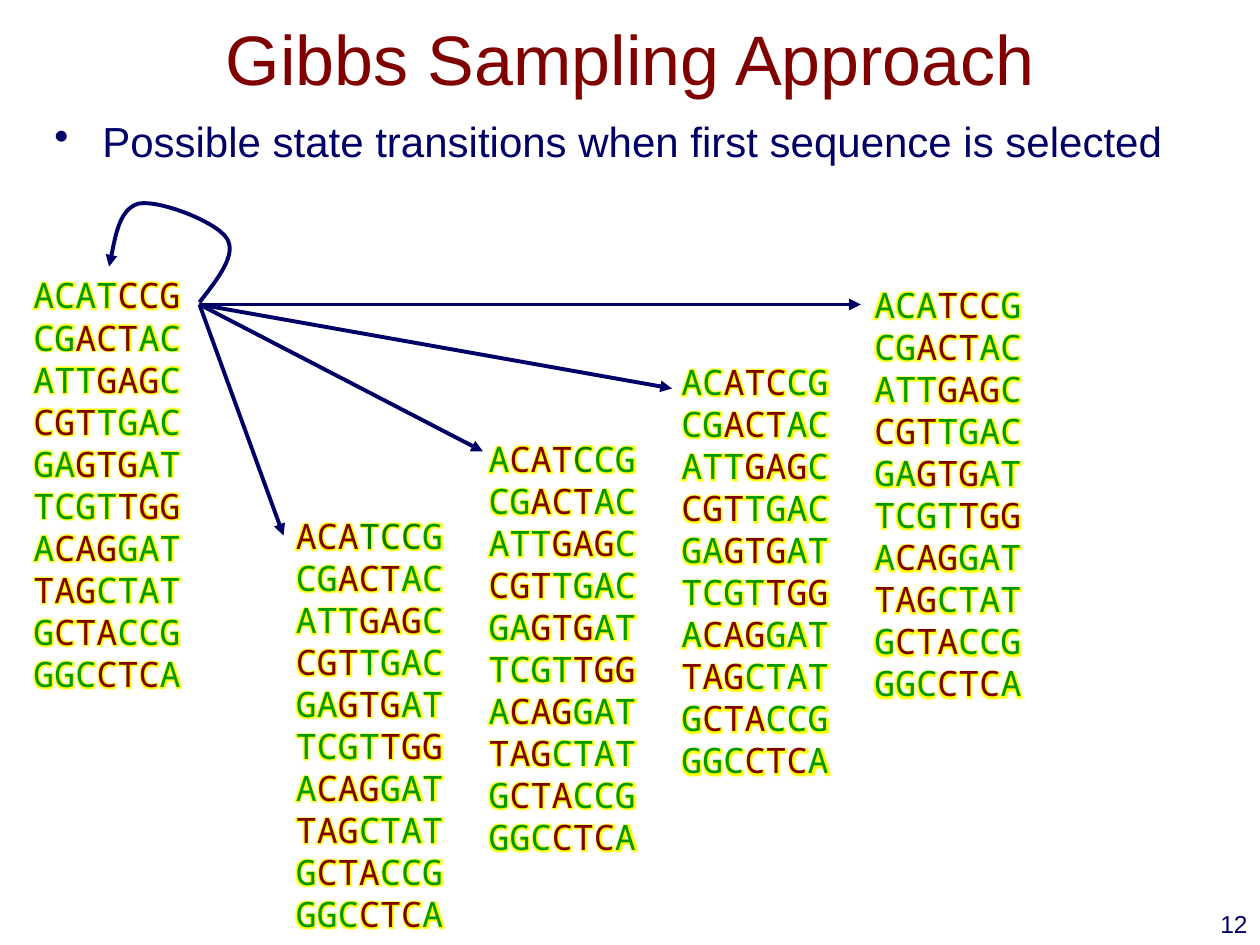
from itertools import groupby
from typing import NamedTuple

from lxml import etree
from pptx import Presentation
from pptx.dml.color import RGBColor
from pptx.enum import shapes, text
from pptx.oxml import ns
from pptx.util import Inches, Pt

MAROON = RGBColor(0x80, 0x00, 0x00)
NAVY = RGBColor(0x00, 0x00, 0x66)
GREEN = RGBColor(0x00, 0x99, 0x00)
DARK_GREEN = RGBColor(0x00, 0x80, 0x00)
GLOW = RGBColor(0xFF, 0xFF, 0x00)

CELL = Inches(1) / 12
MOTIF_LENGTH = 3
FIRST_SEQUENCE = "ACATCCG"
OTHER_SEQUENCES = [
    ("CGACTAC", 2), ("ATTGAGC", 3), ("CGTTGAC", 0),
    ("GAGTGAT", 2), ("TCGTTGG", 4), ("ACAGGAT", 1),
    ("TAGCTAT", 0), ("GCTACCG", 1), ("GGCCTCA", 3),
]


class Point(NamedTuple):
    """A position in grid columns and rows."""
    column: float
    row: float


class Box(NamedTuple):
    """A rectangle in grid columns and rows."""
    column: float
    row: float
    columns: float
    rows: float


class State(NamedTuple):
    """An alignment: its place and the motif start in the first sequence."""
    corner: Point
    start: int
    dark: range = range(0)


CURRENT = State(Point(2, 25.5), 4)
DARK_LETTERS = [range(3, 6), range(4, 5), range(0), range(0)]
NEXT_STATES = [
    State(Point(27 + 18.36 * start, 48.4 - 7.32 * start), start, dark)
    for start, dark in enumerate(DARK_LETTERS)
]
ORIGIN = Point(19, 29)
ARROW_TIPS = [Point(82, 29), Point(64, 37), Point(46, 43), Point(27, 51)]
SELF_LOOP = [
    Point(19, 28.8),
    Point(20.8, 26.5), Point(22.6, 24.2), Point(21.6, 22.7),
    Point(20.6, 21.1), Point(15.1, 19), Point(13.2, 19.4),
    Point(11.3, 19.9), Point(10.4, 25.4), Point(10.4, 25.4),
]


def grid(*cells: float) -> list[int]:
    """Turn grid lengths into slide lengths."""
    return [round(cell * CELL) for cell in cells]


def add_frame(slide, box: Box, wrap: bool = True):
    """Add a text box and return its text frame."""
    frame = slide.shapes.add_textbox(*grid(*box)).text_frame
    frame.word_wrap = wrap
    return frame


def style(paragraph, face: str, size: float, color: RGBColor) -> None:
    """Set the font of a whole paragraph."""
    font = paragraph.font
    font.name, font.size = face, Pt(size)
    font.color.rgb = color


def add_line_of_text(slide, box: Box, words: str, size: float,
                     color: RGBColor, align=text.PP_ALIGN.LEFT):
    """Add a text box that holds one Arial paragraph."""
    frame = add_frame(slide, box)
    paragraph = frame.paragraphs[0]
    paragraph.text, paragraph.alignment = words, align
    style(paragraph, "Arial", size, color)
    return frame


def add_bullet(paragraph, indent: float) -> None:
    """Give a paragraph a round bullet and a hanging indent."""
    paragraph.line_spacing = 0.9
    properties = paragraph._p.get_or_add_pPr()
    properties.set("marL", str(Inches(indent)))
    properties.set("indent", str(-Inches(indent)))
    bullet = etree.Element(ns.qn("a:buChar"), char="•")
    properties.find(ns.qn("a:defRPr")).addprevious(bullet)


def add_glow(run) -> None:
    """Put a yellow glow round the letters of a run."""
    effects = etree.SubElement(run.font._element, ns.qn("a:effectLst"))
    glow = etree.SubElement(effects, ns.qn("a:glow"), rad=str(Pt(4)))
    etree.SubElement(glow, ns.qn("a:srgbClr"), val=str(GLOW))


def add_sequence(paragraph, sequence: str, start: int, dark: range) -> None:
    """Write a sequence with its motif in maroon."""
    def letter_color(index: int) -> RGBColor:
        """Choose the colour of one letter."""
        if start <= index < start + MOTIF_LENGTH:
            return MAROON
        return DARK_GREEN if index in dark else GREEN

    style(paragraph, "Noto Sans Mono", 20, GREEN)
    for color, indexes in groupby(range(len(sequence)), letter_color):
        run = paragraph.add_run()
        run.text = "".join(sequence[index] for index in indexes)
        run.font.color.rgb = color
        add_glow(run)


def add_state(slide, state: State) -> None:
    """Draw one alignment of all sequences."""
    frame = add_frame(slide, Box(*state.corner, 16.5, 41.6), wrap=False)
    frame.auto_size = text.MSO_AUTO_SIZE.SHAPE_TO_FIT_TEXT
    add_sequence(frame.paragraphs[0], FIRST_SEQUENCE, state.start, state.dark)
    for sequence, start in OTHER_SEQUENCES:
        add_sequence(frame.add_paragraph(), sequence, start, range(0))


def style_arrow(arrow) -> None:
    """Give a line its colour, width and arrowhead, without a shadow."""
    arrow.line.color.rgb, arrow.line.width = NAVY, Pt(2.25)
    outline = arrow.line._get_or_add_ln()
    etree.SubElement(outline, ns.qn("a:tailEnd"), type="triangle")
    outline.addnext(etree.Element(ns.qn("a:effectLst")))


def add_arrow(slide, begin: Point, end: Point) -> None:
    """Draw a straight arrow."""
    style_arrow(slide.shapes.add_connector(
        shapes.MSO_CONNECTOR.STRAIGHT, *grid(*begin, *end)))


def add_curved_arrow(slide, points: list[Point]) -> None:
    """Draw an arrow along cubic curves, three points to a curve."""
    first, *rest = [tuple(grid(*point)) for point in points]
    builder = slide.shapes.build_freeform(*first)
    builder.add_line_segments(rest, close=False)
    curve = builder.convert_to_shape()
    curve.fill.background()
    segments = list(curve._element.iter(ns.qn("a:lnTo")))
    for index in range(0, len(segments), 3):
        bend = etree.Element(ns.qn("a:cubicBezTo"))
        segments[index].addprevious(bend)
        for segment in segments[index:index + 3]:
            bend.append(segment[0])
            segment.getparent().remove(segment)
    style_arrow(curve)


def main() -> None:
    """Build the slide and save it."""
    deck = Presentation()
    deck.slide_width, deck.slide_height = Inches(10), Inches(7.5)
    slide = deck.slides.add_slide(deck.slide_layouts[6])

    title = add_line_of_text(slide, Box(9, -2, 102, 15),
                             "Gibbs Sampling Approach", 40, MAROON,
                             text.PP_ALIGN.CENTER)
    title.vertical_anchor = text.MSO_ANCHOR.MIDDLE
    topic = add_line_of_text(
        slide, Box(4, 11, 112, 11),
        "Possible state transitions when first sequence is selected", 24, NAVY)
    add_bullet(topic.paragraphs[0], 0.38)

    for state in [CURRENT, *NEXT_STATES]:
        add_state(slide, state)
    for tip in ARROW_TIPS:
        add_arrow(slide, ORIGIN, tip)
    add_curved_arrow(slide, SELF_LOOP)
    add_line_of_text(slide, Box(95, 86, 25, 6), "12", 14, NAVY,
                     text.PP_ALIGN.RIGHT)
    deck.save("out.pptx")


if __name__ == "__main__":
    main()
